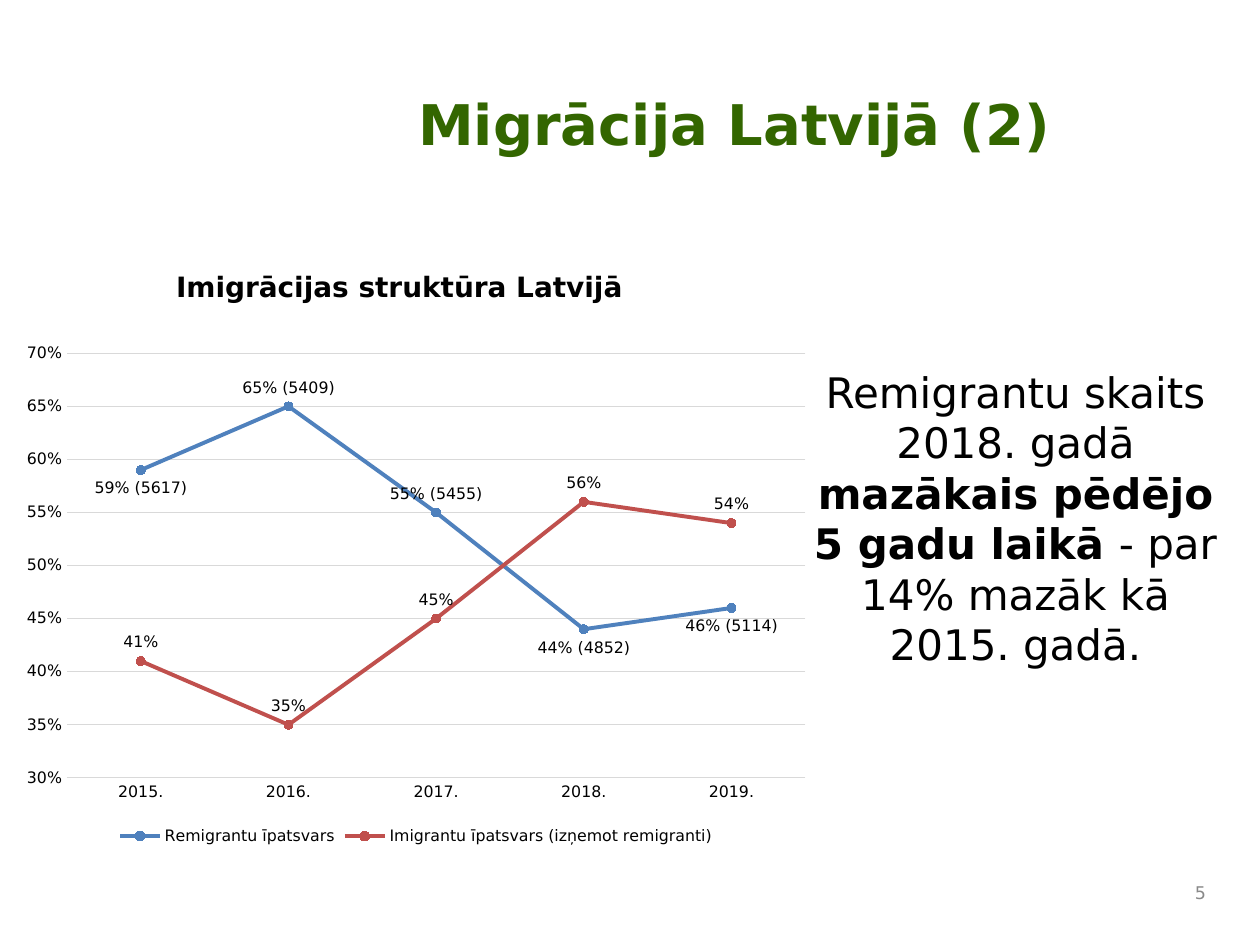
from lxml.etree import SubElement
from pptx import Presentation
from pptx.chart.data import CategoryChartData
from pptx.dml.color import RGBColor
from pptx.enum.chart import (XL_CHART_TYPE, XL_LABEL_POSITION, XL_LEGEND_POSITION,
                             XL_MARKER_STYLE, XL_TICK_MARK)
from pptx.enum.text import MSO_ANCHOR, PP_ALIGN
from pptx.oxml.ns import qn
from pptx.util import Pt

BLACK = "000000"
GRID = "D9D9D9"


def set_font(font, size, color=BLACK, bold=False):
    font.name = "DejaVu Sans"
    font.size = Pt(size)
    font.bold = bold
    font.color.rgb = RGBColor.from_string(color)


def fill_text(shape, runs, size, align, anchor, color=BLACK, wrap=True):
    frame = shape.text_frame
    frame.word_wrap = wrap
    frame.vertical_anchor = anchor
    paragraph = frame.paragraphs[0]
    paragraph.alignment = align
    for text, bold in runs:
        run = paragraph.add_run()
        run.text = text
        set_font(run.font, size, color, bold)


presentation = Presentation()
presentation.slide_width = Pt(720)
presentation.slide_height = Pt(540)
slide = presentation.slides.add_slide(presentation.slide_layouts[5])

title = slide.shapes.title
title.left, title.top, title.width, title.height = Pt(191.5), Pt(29.5), Pt(456.5), Pt(81.4)
fill_text(title, [("Migrācija Latvijā (2)", True)], 32, PP_ALIGN.CENTER,
          MSO_ANCHOR.MIDDLE, "336600")

heading = slide.shapes.add_textbox(Pt(90), Pt(150.5), Pt(276.5), Pt(26.6))
fill_text(heading, [("Imigrācijas struktūra Latvijā", True)], 16, PP_ALIGN.CENTER,
          MSO_ANCHOR.TOP, wrap=False)
heading.text_frame.paragraphs[0].space_after = Pt(6)

page_number = slide.shapes.add_textbox(Pt(640.8), Pt(498.2), Pt(55.4), Pt(23.8))
fill_text(page_number, [("5", False)], 10, PP_ALIGN.RIGHT, MSO_ANCHOR.MIDDLE, "898989")

comment = slide.shapes.add_textbox(Pt(457.2), Pt(205.9), Pt(246.2), Pt(181.4))
fill_text(comment, [("Remigrantu skaits 2018. gadā ", False),
                    ("mazākais pēdējo 5 gadu laikā ", True),
                    ("- par 14% mazāk kā 2015. gadā.", False)],
          24, PP_ALIGN.CENTER, MSO_ANCHOR.TOP)

chart_data = CategoryChartData(number_format="0%")
chart_data.categories = ["2015.", "2016.", "2017.", "2018.", "2019."]
chart_data.add_series("Remigrantu īpatsvars", [0.59, 0.65, 0.55, 0.44, 0.46])
chart_data.add_series("Imigrantu īpatsvars (izņemot remigranti)", [0.41, 0.35, 0.45, 0.56, 0.54])
chart = slide.shapes.add_chart(XL_CHART_TYPE.LINE_MARKERS, Pt(5.8), Pt(190.1),
                               Pt(463.7), Pt(295.9), chart_data).chart
set_font(chart.font, 10)
chart.has_title = False
chart.has_legend = True
chart.legend.position = XL_LEGEND_POSITION.BOTTOM
chart.legend.include_in_layout = False
set_font(chart.legend.font, 9)

for axis in (chart.category_axis, chart.value_axis):
    axis.major_tick_mark = XL_TICK_MARK.NONE
    axis.minor_tick_mark = XL_TICK_MARK.NONE
    set_font(axis.tick_labels.font, 9)
category_line = chart.category_axis.format.line
value_axis = chart.value_axis
value_axis.format.line.fill.background()
value_axis.minimum_scale = 0.3
value_axis.maximum_scale = 0.7
value_axis.major_unit = 0.05
value_axis.tick_labels.number_format = "0%"
value_axis.tick_labels.number_format_is_linked = False
for line in (category_line, value_axis.major_gridlines.format.line):
    line.color.rgb = RGBColor.from_string(GRID)
    line.width = Pt(0.75)

plot = chart.plots[0]
plot.vary_by_categories = False
styles = [("4F81BD", XL_LABEL_POSITION.BELOW), ("C0504D", XL_LABEL_POSITION.ABOVE)]
for series, (color, position) in zip(plot.series, styles):
    series.smooth = False
    series.format.line.color.rgb = RGBColor.from_string(color)
    series.format.line.width = Pt(2.25)
    marker = series.marker
    marker.style = XL_MARKER_STYLE.CIRCLE
    marker.size = 5
    marker.format.fill.solid()
    marker.format.fill.fore_color.rgb = RGBColor.from_string(color)
    marker.format.line.color.rgb = RGBColor.from_string(color)
    labels = series.data_labels
    labels.show_value = True
    labels.number_format = "0%"
    labels.number_format_is_linked = False
    labels.position = position
    set_font(labels.font, 9)

point_labels = ["59% (5617)", "65% (5409)", "55% (5455)", "44% (4852)", "46% (5114)"]
for index, text in enumerate(point_labels):
    label = plot.series[0].points[index].data_label
    run = label.text_frame.paragraphs[0].add_run()
    run.text = text
    set_font(run.font, 9)
    label.position = XL_LABEL_POSITION.ABOVE if index in (1, 2) else XL_LABEL_POSITION.BELOW

plot_area = chart.element.find(".//" + qn("c:plotArea"))
layout = plot_area.find(qn("c:layout"))
if layout is None:
    layout = SubElement(plot_area, qn("c:layout"))
    plot_area.insert(0, layout)
manual_layout = SubElement(layout, qn("c:manualLayout"))
for tag, value in [("layoutTarget", "inner"), ("xMode", "edge"), ("yMode", "edge"),
                   ("x", "0.07"), ("y", "0.04"), ("w", "0.91"), ("h", "0.82")]:
    SubElement(manual_layout, qn("c:" + tag)).set("val", value)

presentation.save("out.pptx")
